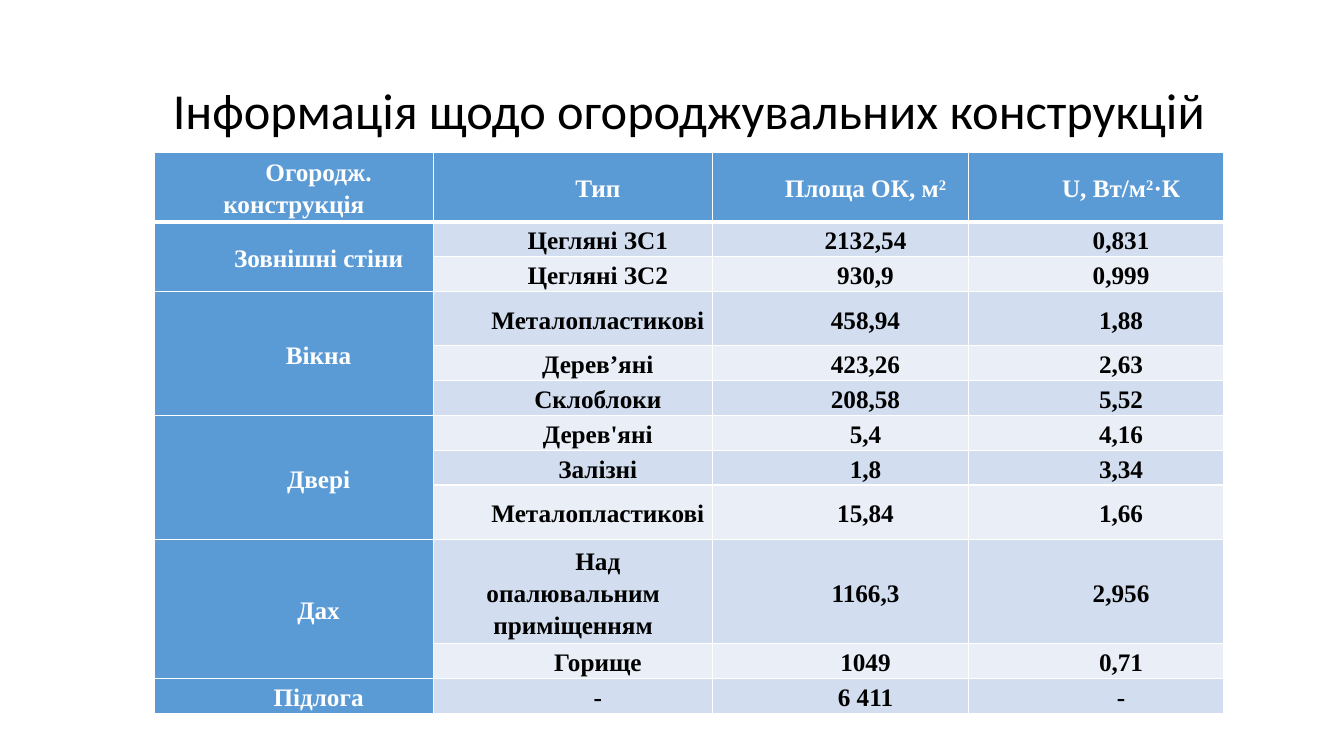
import pptx
import pptx.dml.color
import pptx.enum.text
import pptx.util
from lxml import etree
from pptx.oxml.ns import qn
from pptx.util import Inches

COLORS = {
    "header": "5B9BD5",
    "dark band": "D2DEEF",
    "light band": "EAEFF7",
    "white": "FFFFFF",
    "black": "000000",
}
TITLE = "Інформація щодо огороджувальних конструкцій"
COLUMN_WIDTHS = [2.77, 2.77, 2.54, 2.53]
ROW_HEIGHTS = [0.54, 0.26, 0.28, 0.54, 0.26, 0.26, 0.26, 0.26, 0.54, 0.81, 0.26, 0.26]
HEADERS = ["Огородж. конструкція", "Тип", "Площа ОК, м²", "U, Вт/м²·К"]
CONSTRUCTIONS = {
    "Зовнішні стіни": [
        ("Цегляні ЗС1", "2132,54", "0,831"),
        ("Цегляні ЗС2", "930,9", "0,999"),
    ],
    "Вікна": [
        ("Металопластикові", "458,94", "1,88"),
        ("Дерев’яні", "423,26", "2,63"),
        ("Склоблоки", "208,58", "5,52"),
    ],
    "Двері": [
        ("Дерев'яні", "5,4", "4,16"),
        ("Залізні", "1,8", "3,34"),
        ("Металопластикові", "15,84", "1,66"),
    ],
    "Дах": [
        ("Над опалювальним приміщенням", "1166,3", "2,956"),
        ("Горище", "1049", "0,71"),
    ],
    "Підлога": [("-", "6 411", "-")],
}


def rgb(name):
    return pptx.dml.color.RGBColor.from_string(COLORS[name])


def set_borders(cell, widths):
    """Draw white borders, given in points as left, right, top, bottom."""
    properties = cell._tc.get_or_add_tcPr()
    for index, (side, width) in enumerate(zip("LRTB", widths)):
        line = etree.Element(qn(f"a:ln{side}"), w=str(pptx.util.Pt(width)))
        fill = etree.SubElement(line, qn("a:solidFill"))
        etree.SubElement(fill, qn("a:srgbClr"), val=COLORS["white"])
        properties.insert(index, line)


presentation = pptx.Presentation()
presentation.slide_width = Inches(13.33)
presentation.slide_height = Inches(7.5)
slide = presentation.slides.add_slide(presentation.slide_layouts[6])

# Title
title_box = slide.shapes.add_textbox(Inches(0.92), Inches(0.4), Inches(11.83), Inches(1.45))
title_frame = title_box.text_frame
title_frame.word_wrap = True
title_frame.vertical_anchor = pptx.enum.text.MSO_ANCHOR.MIDDLE
title = title_frame.paragraphs[0]
title.text = TITLE
title.alignment = pptx.enum.text.PP_ALIGN.CENTER
title.line_spacing = 0.9
title.font.name = "Calibri"
title.font.size = pptx.util.Pt(36)
title.font.color.rgb = rgb("black")

# Table structure
table = slide.shapes.add_table(
    len(ROW_HEIGHTS), len(COLUMN_WIDTHS), Inches(1.53), Inches(1.51),
    Inches(sum(COLUMN_WIDTHS)), Inches(sum(ROW_HEIGHTS)),
).table
for column, width in zip(table.columns, COLUMN_WIDTHS):
    column.width = Inches(width)
for row, height in zip(table.rows, ROW_HEIGHTS):
    row.height = Inches(height)

table_rows = [HEADERS]
for construction, variants in CONSTRUCTIONS.items():
    first = len(table_rows)
    if len(variants) > 1:
        table.cell(first, 0).merge(table.cell(first + len(variants) - 1, 0))
    for index, variant in enumerate(variants):
        table_rows.append([construction if index == 0 else "", *variant])

# Table cells
for row_index, texts in enumerate(table_rows):
    for column_index, text in enumerate(texts):
        cell = table.cell(row_index, column_index)
        is_header = row_index == 0 or column_index == 0
        band = "dark band" if row_index % 2 else "light band"
        cell.fill.solid()
        cell.fill.fore_color.rgb = rgb("header" if is_header else band)
        set_borders(cell, [1, 1, 3 if row_index == 1 else 1, 3 if row_index == 0 else 1])
        cell.vertical_anchor = pptx.enum.text.MSO_ANCHOR.MIDDLE
        cell.margin_left = cell.margin_right = Inches(0.07)
        cell.margin_top = cell.margin_bottom = 0

        paragraph = cell.text_frame.paragraphs[0]
        paragraph.alignment = pptx.enum.text.PP_ALIGN.CENTER
        paragraph.line_spacing = 1.15
        paragraph._p.get_or_add_pPr().set("indent", str(Inches(0.49)))
        paragraph.font.name = "Times New Roman"
        paragraph.font.size = pptx.util.Pt(18)
        paragraph.font.bold = True
        paragraph.font.color.rgb = rgb("white" if is_header else "black")
        before, superscript, after = text.partition("²")
        for part in filter(None, [before, superscript, after]):
            run = paragraph.add_run()
            run.text = part.replace("²", "2")
            if part == "²":
                run.font._element.set("baseline", "30000")

presentation.save("out.pptx")
